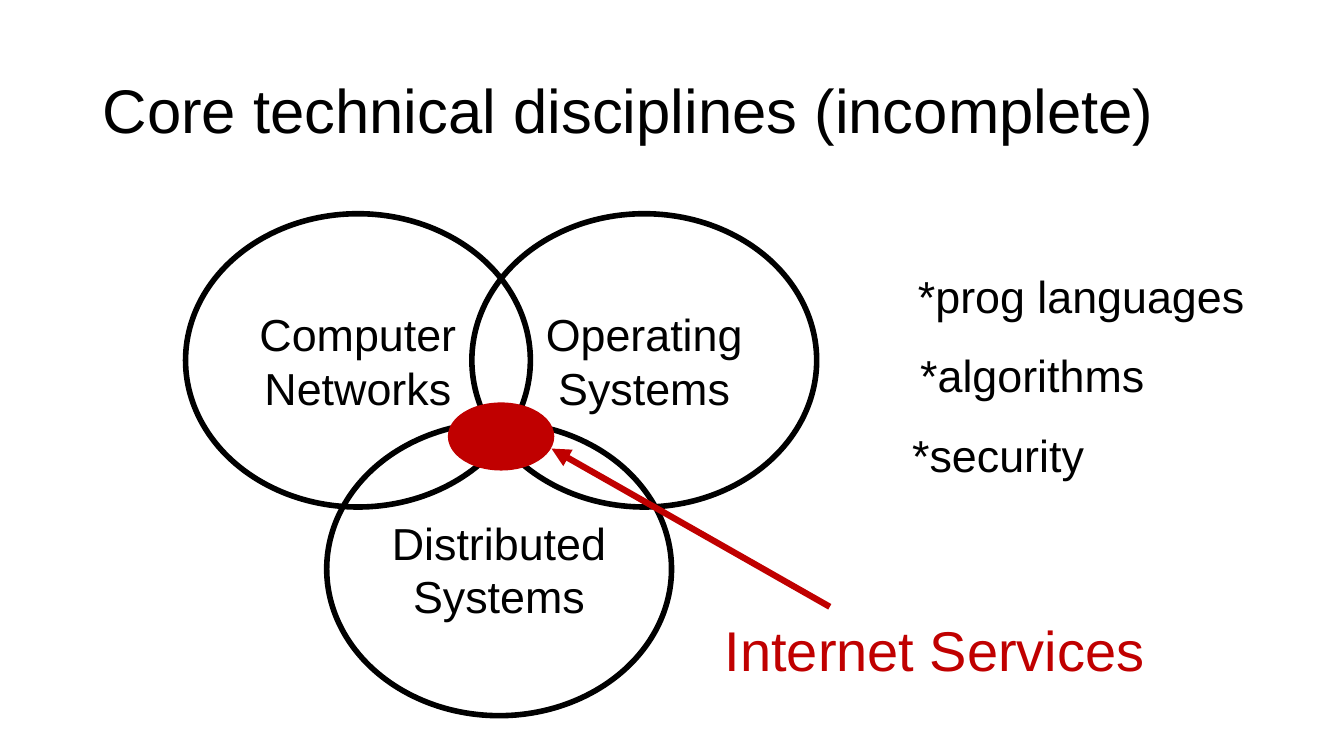
from pptx import Presentation
from pptx.dml.color import RGBColor
from pptx.enum.shapes import MSO_CONNECTOR, MSO_SHAPE
from pptx.enum.text import MSO_ANCHOR, PP_ALIGN
from pptx.oxml.ns import qn
from pptx.util import Inches, Pt
from lxml.etree import SubElement

BLACK = "000000"
RED = "C00000"
CIRCLE_SIZE = (3.42, 2.91)
DISCIPLINES = [
    ("Computer Networks", 1.84, 2.12),
    ("Operating Systems", 4.68, 2.12),
    ("Distributed Systems", 3.24, 4.19),
]
OTHER_TOPICS = [("*prog languages", 3.73), ("*algorithms", 2.76), ("*security", 2.08)]


def rgb(color):
    return RGBColor.from_string(color)


def write(frame, text, size, color=BLACK, align=PP_ALIGN.CENTER, anchor=MSO_ANCHOR.MIDDLE):
    frame.word_wrap = True
    frame.vertical_anchor = anchor
    paragraph = frame.paragraphs[0]
    paragraph.text = text
    paragraph.alignment = align
    font_format = {"name": "Arial", "size": Pt(size)}
    for attribute, value in font_format.items():
        setattr(paragraph.font, attribute, value)
    paragraph.font.color.rgb = rgb(color)
    return paragraph


def add_label(slide, text, left, top, width, height, size, **style):
    label = slide.shapes.add_textbox(*map(Inches, (left, top, width, height)))
    return write(label.text_frame, text, size, **style)


def add_ellipse(slide, left, top, width, height, line=BLACK, fill=None):
    ellipse = slide.shapes.add_shape(MSO_SHAPE.OVAL, *map(Inches, (left, top, width, height)))
    ellipse.shadow.inherit = False
    if fill:
        ellipse.fill.solid()
        ellipse.fill.fore_color.rgb = rgb(fill)
    else:
        ellipse.fill.background()
    ellipse.line.color.rgb = rgb(line)
    ellipse.line.width = Pt(4)
    return ellipse


def add_arrow(slide, start, end, color, width):
    arrow = slide.shapes.add_connector(MSO_CONNECTOR.STRAIGHT, *map(Inches, start + end))
    arrow.line.color.rgb = rgb(color)
    arrow.line.width = Pt(width)
    SubElement(arrow.line._get_or_add_ln(), qn("a:tailEnd"), type="triangle")
    SubElement(arrow._element.spPr, qn("a:effectLst"))


def main():
    deck = Presentation()
    deck.slide_width, deck.slide_height = Inches(13.33), Inches(7.5)
    slide = deck.slides.add_slide(deck.slide_layouts[6])

    title = add_label(slide, "Core technical disciplines (incomplete)",
                      0.92, 0.4, 11.5, 1.45, 44, align=PP_ALIGN.LEFT)
    title.line_spacing = 0.9

    for discipline, left, top in DISCIPLINES:
        circle = add_ellipse(slide, left, top, *CIRCLE_SIZE)
        write(circle.text_frame, discipline, 32)
    add_ellipse(slide, 4.47, 4.02, 1, 0.62, line=RED, fill=RED)

    for row, (topic, width) in enumerate(OTHER_TOPICS):
        add_label(slide, topic, 8.86, 2.62 + 0.785 * row, width, 0.64, 32,
                  anchor=MSO_ANCHOR.TOP)

    add_arrow(slide, (8.23, 6.02), (5.47, 4.45), RED, 4.5)
    add_label(slide, "Internet Services", 6.91, 6.06, 4.72, 0.77, 40,
              color=RED, anchor=MSO_ANCHOR.TOP)
    deck.save("out.pptx")


if __name__ == "__main__":
    main()
